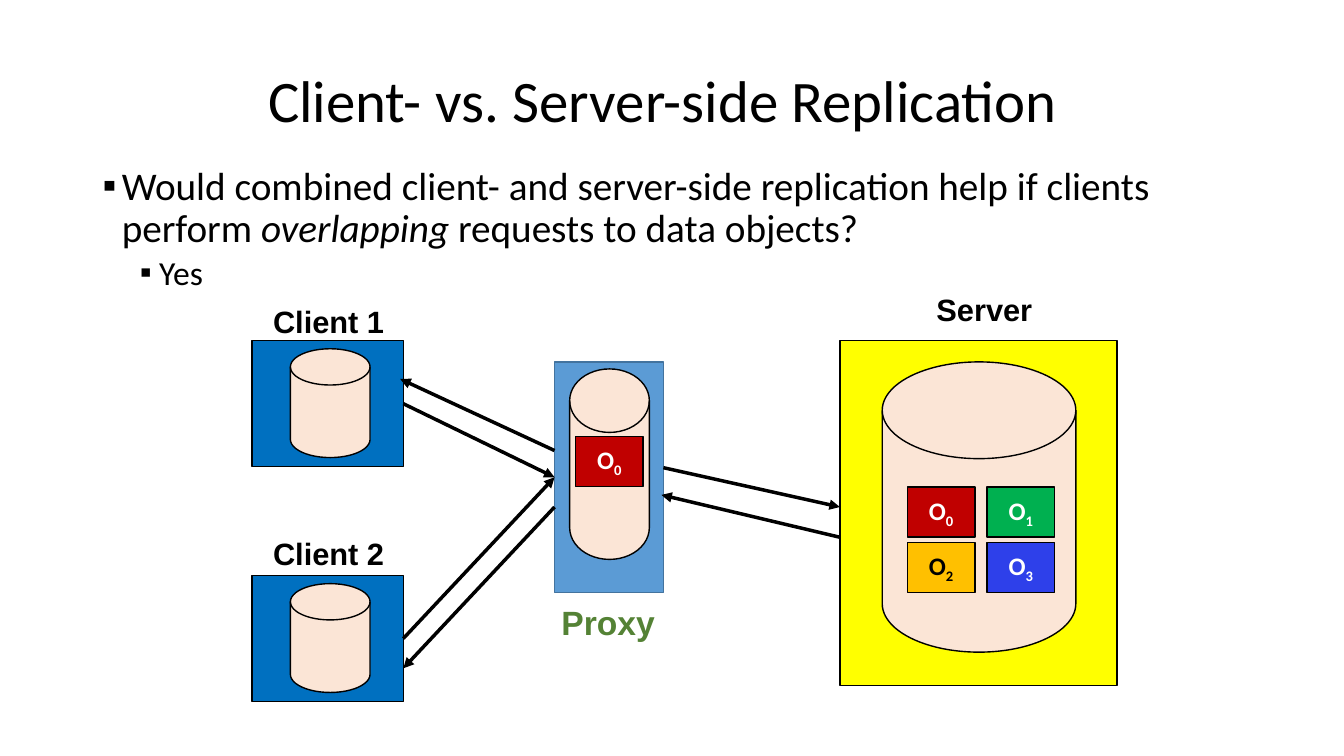
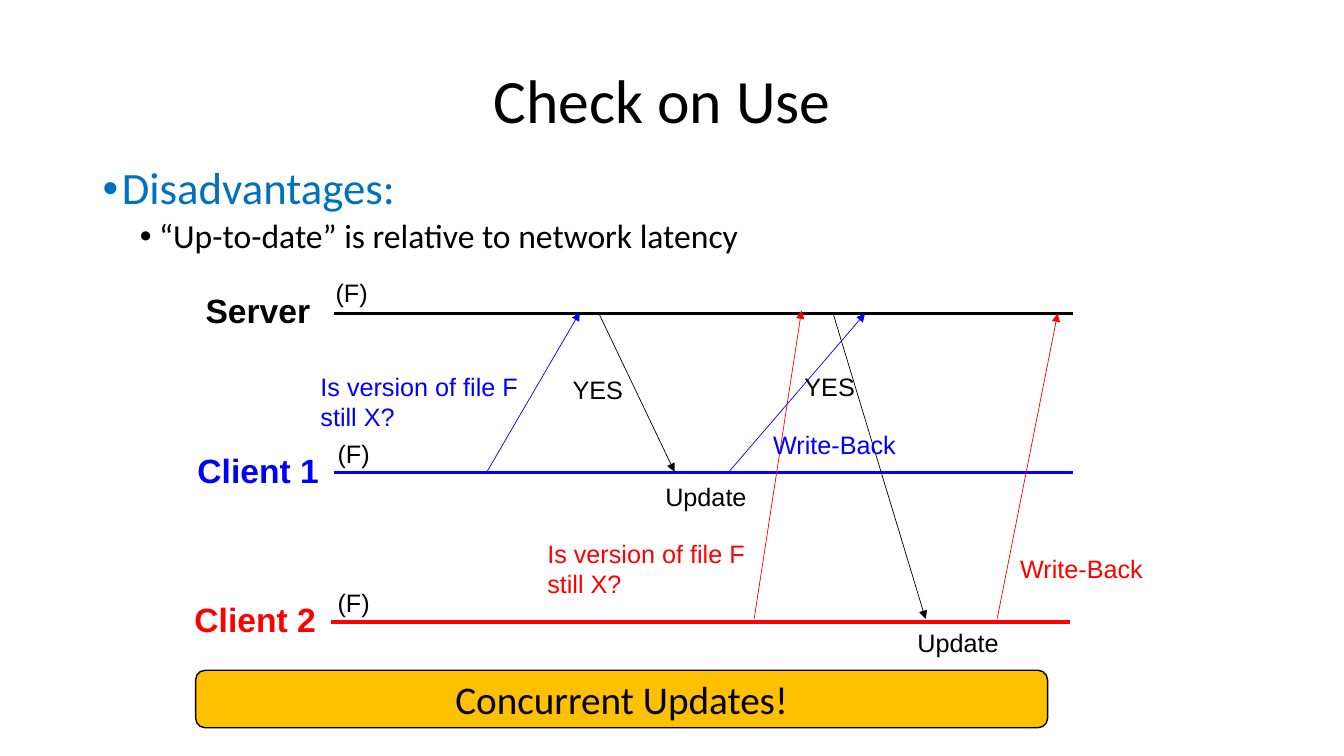
from pptx import Presentation
from pptx.dml.color import RGBColor
from pptx.enum import shapes, text
from pptx.oxml.xmlchemy import OxmlElement
from pptx.util import Inches, Pt

COLORS = {
    "black": "000000", "white": "FFFFFF", "yellow": "FFFF00", "peach": "FBE5D6",
    "crimson": "C00000", "green": "00B050", "amber": "FFC000", "indigo": "2E40EA",
    "azure": "0070C0", "sky": "5B9BD5", "steel": "43739E", "olive": "548235",
    "blue": "0000FF", "red": "FF0000",
}
KIND = shapes.MSO_SHAPE
RIGHT_SIDE, LEFT_SIDE = 3, 1


def rgb(name):
    return RGBColor.from_string(COLORS[name])


def add_element(parent, tag, **attributes):
    element = OxmlElement(tag)
    for key, value in attributes.items():
        element.set(key, value)
    parent.append(element)


class Deck:
    """Shared style and the slide being built."""

    heading_font, label_font = "Calibri", "Arial"

    def __init__(self):
        self.file = Presentation()
        self.file.slide_width = Inches(13.33)
        self.file.slide_height = Inches(7.5)
        self.slide = None

    def start(self, title, size):
        self.slide = self.file.slides.add_slide(self.file.slide_layouts[6])
        frame = self.frame(0.92, 0.3, 11.3, 1.45)
        frame.vertical_anchor = text.MSO_ANCHOR.MIDDLE
        heading = frame.paragraphs[0]
        heading.alignment = text.PP_ALIGN.CENTER
        heading.line_spacing = 0.9
        heading.text = title
        self.style(heading, size)

    def frame(self, left, top, width, height, wrap=True):
        box = self.slide.shapes.add_textbox(*map(Inches, (left, top, width, height)))
        box.text_frame.word_wrap = wrap
        return box.text_frame

    def style(self, paragraph, size, color="black", font=heading_font, bold=False):
        paragraph.font.size = Pt(size)
        paragraph.font.name = font
        paragraph.font.bold = bold
        paragraph.font.color.rgb = rgb(color)

    def bullets(self, mark, items):
        """Each item is (level, size, colour, runs); a run is (words, italic)."""
        frame = self.frame(0.92, 1.6, 11.3, 5.5)
        for index, (level, size, color, runs) in enumerate(items):
            paragraph = frame.add_paragraph() if index else frame.paragraphs[0]
            paragraph.level = level
            paragraph.line_spacing = 0.9
            if index:
                paragraph.space_before = Pt(3.8 if level else 7.5)
            properties = paragraph._p.get_or_add_pPr()
            properties.set("marL", str(Inches(0.56 if level else 0.19)))
            properties.set("indent", str(Inches(-0.19)))
            add_element(properties, "a:buFont", typeface=self.label_font)
            add_element(properties, "a:buChar", char=mark)
            for words, italic in runs:
                run = paragraph.add_run()
                run.text = words
                if italic:
                    run.font.italic = True
            self.style(paragraph, size, color)

    def label(self, lines, left, top, width, size, color="black", bold=False):
        lines = lines.split("\n")
        frame = self.frame(left, top, width, 0.1 + len(lines) * size / 60, wrap=False)
        frame.auto_size = text.MSO_AUTO_SIZE.SHAPE_TO_FIT_TEXT
        for index, line in enumerate(lines):
            paragraph = frame.add_paragraph() if index else frame.paragraphs[0]
            paragraph.text = line
            self.style(paragraph, size, color, self.label_font, bold)

    def shape(self, kind, left, top, width, height, fill, outline="black"):
        shape = self.slide.shapes.add_shape(kind, *map(Inches, (left, top, width, height)))
        shape.shadow.inherit = False
        shape.fill.solid()
        shape.fill.fore_color.rgb = rgb(fill)
        shape.line.color.rgb = rgb(outline)
        shape.line.width = Pt(1)
        return shape

    def caption(self, shape, words, size, color="black", bold=False, subscript=""):
        shape.text_frame.vertical_anchor = text.MSO_ANCHOR.MIDDLE
        paragraph = shape.text_frame.paragraphs[0]
        paragraph.alignment = text.PP_ALIGN.CENTER
        paragraph.add_run().text = words
        if subscript:
            run = paragraph.add_run()
            run.text = subscript
            run._r.get_or_add_rPr().set("baseline", "-25000")
        self.style(paragraph, size, color, bold=bold)

    def data_object(self, number, left, top):
        fill = ("crimson", "green", "amber", "indigo")[number]
        square = self.shape(KIND.RECTANGLE, left, top, 0.67, 0.5, fill)
        ink = "black" if fill == "amber" else "white"
        self.caption(square, "O", 18, ink, True, str(number))

    def line(self, start, end, color="black", width=2.5, arrow=True):
        connector = self.slide.shapes.add_connector(
            shapes.MSO_CONNECTOR.STRAIGHT, *map(Inches, (*start, *end)))
        connector.line.color.rgb = rgb(color)
        connector.line.width = Pt(width)
        if arrow:
            add_element(connector.line._get_or_add_ln(), "a:tailEnd", type="triangle")
        add_element(connector._element.spPr, "a:effectLst")
        return connector


def replication_slide(deck):
    deck.start("Client- vs. Server-side Replication", 42)
    deck.bullets("▪", [
        (0, 28, "black", [
            ("Would combined client- and server-side replication help if clients perform ", False),
            ("overlapping ", True), ("requests to data objects?", False)]),
        (1, 24, "black", [("Yes", False)]),
    ])

    deck.shape(KIND.RECTANGLE, 8.33, 3.38, 2.75, 3.42, "yellow")
    deck.shape(KIND.FLOWCHART_MAGNETIC_DISK, 8.75, 3.59, 1.92, 2.88, "peach")
    for number in range(4):
        row, column = divmod(number, 2)
        deck.data_object(number, 9 + 0.79 * column, 4.83 + 0.55 * row)
    deck.label("Server", 9.19, 2.83, 1.16, 22, bold=True)

    proxy = deck.shape(KIND.RECTANGLE, 5.5, 3.59, 1.08, 2.29, "sky", "steel")
    deck.shape(KIND.FLOWCHART_MAGNETIC_DISK, 5.65, 3.66, 0.79, 1.89, "peach")
    deck.data_object(0, 5.71, 4.33)
    deck.label("Proxy", 5.47, 5.92, 1.14, 24, "olive", True)

    for name, top, label_top in (("Client 1", 3.38, 2.95), ("Client 2", 5.71, 5.26)):
        client = deck.shape(KIND.RECTANGLE, 2.5, top, 1.5, 1.25, "azure")
        deck.shape(KIND.FLOWCHART_MAGNETIC_DISK, 2.88, top + 0.08, 0.79, 1.08, "peach")
        deck.label(name, 2.61, label_top, 1.32, 22, bold=True)
        request = deck.line((4, top + 0.63), (5.5, 4.73))
        request.begin_connect(client, RIGHT_SIDE)
        request.end_connect(proxy, LEFT_SIDE)

    for start, end in (
        ((5.5, 4.47), (3.97, 3.76)), ((5.5, 5.03), (4, 6.63)),
        ((6.58, 4.64), (8.33, 5.03)), ((8.33, 5.33), (6.56, 4.91)),
    ):
        deck.line(start, end)


def check_on_use_slide(deck):
    deck.start("Check on Use", 44)
    deck.bullets("•", [
        (0, 32, "azure", [("Disadvantages:", False)]),
        (1, 24, "black", [("“Up-to-date” is relative to network latency", False)]),
    ])

    for name, color, left, width, start, y, file_left, file_top in (
        ("Server", "black", 1.94, 1.25, 3.31, 3.11, 3.23, 2.7),
        ("Client 1", "blue", 1.86, 1.42, 3.31, 4.69, 3.25, 4.3),
        ("Client 2", "red", 1.83, 1.42, 3.28, 6.17, 3.25, 5.78),
    ):
        deck.line((start, y), (start + 7.33, y), color, arrow=False)
        deck.label(name, left, y - 0.28, width, 24, color, True)
        deck.label("(F)", file_left, file_top, 0.52, 18)

    for start, end, color in (
        ((4.83, 4.68), (5.75, 3.1), "blue"), ((5.94, 3.11), (6.69, 4.68), "black"),
        ((7.48, 6.14), (7.95, 3.08), "red"), ((8.26, 3.1), (9.18, 6.14), "black"),
        ((7.23, 4.68), (8.58, 3.11), "blue"), ((9.89, 6.14), (10.49, 3.11), "red"),
    ):
        deck.line(start, end, color, 0.5)

    question = "Is version of file F\nstill X?"
    for message, left, top, width, color in (
        (question, 3.08, 3.63, 2.25, "blue"), (question, 5.33, 5.29, 2.25, "red"),
        ("YES", 5.58, 3.66, 0.71, "black"), ("YES", 7.88, 3.63, 0.71, "black"),
        ("Update", 6.5, 4.73, 1.02, "black"), ("Update", 9, 6.17, 1.02, "black"),
        ("Write-Back", 7.57, 4.21, 1.43, "blue"), ("Write-Back", 10.02, 5.44, 1.43, "red"),
    ):
        deck.label(message, left, top, width, 18, color)

    conclusion = deck.shape(KIND.ROUNDED_RECTANGLE, 1.94, 6.65, 8.45, 0.57, "amber")
    deck.caption(conclusion, "Concurrent Updates!", 28)


def main():
    deck = Deck()
    replication_slide(deck)
    check_on_use_slide(deck)
    deck.file.save("out.pptx")


if __name__ == "__main__":
    main()
